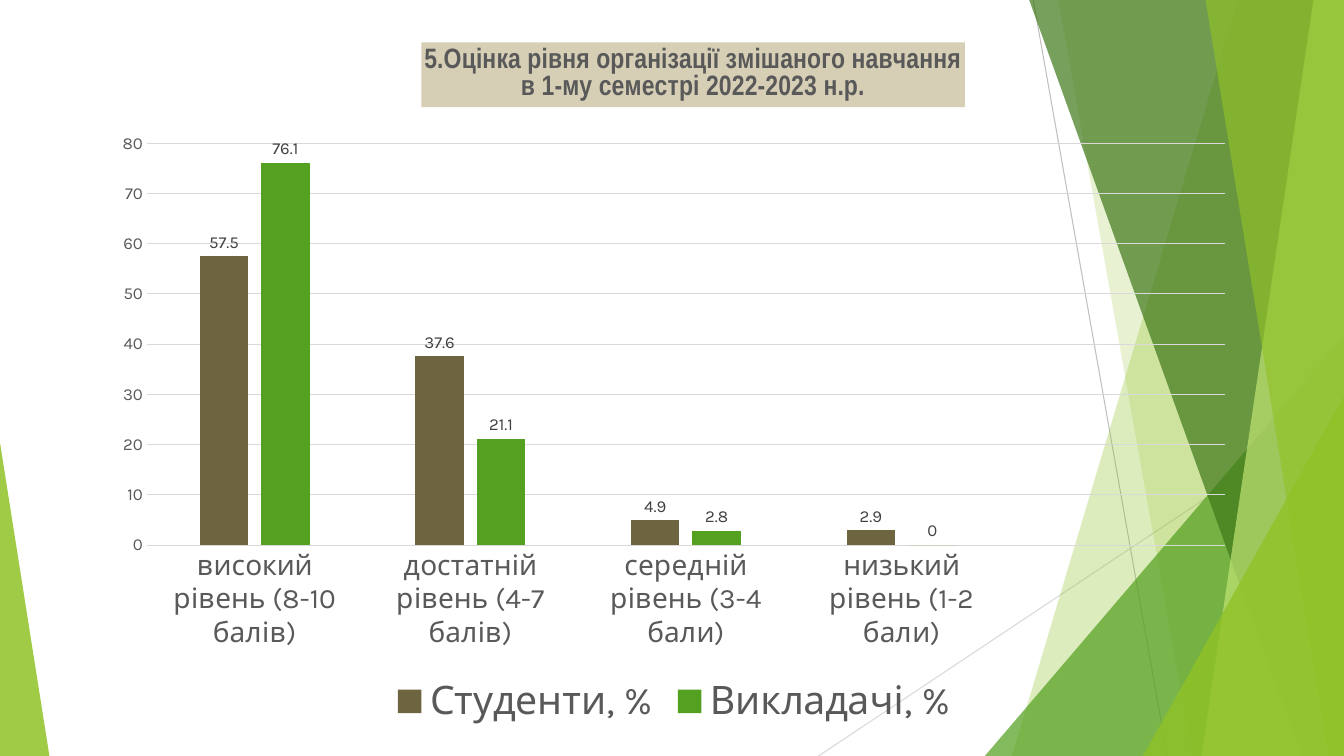
from dataclasses import dataclass

import pptx
import pptx.chart.chart
import pptx.chart.data
import pptx.dml.color
import pptx.dml.fill
import pptx.enum.chart
import pptx.enum.shapes
import pptx.enum.text
import pptx.oxml
import pptx.oxml.ns
import pptx.shapes.autoshape
import pptx.slide
import pptx.text.text
import pptx.util

SLIDE_WIDTH = pptx.util.Inches(13.333)
SLIDE_HEIGHT = pptx.util.Inches(7.5)
COLORS = {
    "lime": "90C226",
    "pale lime": "C0E474",
    "green": "54A021",
    "dark green": "3F7819",
    "olive": "6D6540",
    "sand": "D6CFB6",
    "text": "595959",
    "label": "404040",
    "black": "000000",
    "line": "BFBFBF",
    "light line": "D9D9D9",
}
CHART_FONT = "Karla"
TITLE_FONT = "Arial Narrow"
TITLE = "5.Оцінка рівня організації змішаного навчання\nв 1-му семестрі 2022-2023 н.р."
CATEGORIES = [
    "високий рівень (8-10 балів)",
    "достатній рівень (4-7 балів)",
    "середній рівень (3-4 бали)",
    "низький рівень (1-2 бали)",
    "",
]


# Positions and sizes are percentages of the slide's width and height.
@dataclass
class Ray:
    start: tuple[float, float]
    end: tuple[float, float]
    color: str


@dataclass
class Shard:
    """A band from the slanted edge top-bottom to the slide's right edge."""
    top: float
    bottom: float
    color: str
    opacity: int


@dataclass
class Corner:
    """A right triangle standing on the slide's bottom edge."""
    left: float
    top: float
    width: float
    apex: float
    color: str
    opacity: int


@dataclass
class Series:
    name: str
    values: list[float | None]
    color: str


RAYS = [
    Ray((76.88, 0), (86.85, 100), "line"),
    Ray((100, 53.73), (60.9, 100), "light line"),
]
FACETS = [
    Shard(92.1, 75.3, "lime", 30),
    Shard(78.75, 88.73, "lime", 20),
    Corner(73.28, 44.4, 26.72, 1, "green", 72),
    Shard(76.58, 96.83, "dark green", 70),
    Shard(97.73, 89.4, "pale lime", 70),
    Shard(89.7, 98.85, "lime", 65),
    Corner(85.05, 52.4, 14.95, 1, "lime", 80),
    Corner(0, 58.53, 3.68, 0, "lime", 85),
]
SERIES = [
    Series("Студенти, %", [57.5, 37.6, 4.9, 2.9, None], "olive"),
    Series("Викладачі, %", [76.1, 21.1, 2.8, 0, None], "green"),
]


def across(percent: float) -> int:
    return round(SLIDE_WIDTH * percent / 100)


def down(percent: float) -> int:
    return round(SLIDE_HEIGHT * percent / 100)


def rgb(name: str) -> pptx.dml.color.RGBColor:
    return pptx.dml.color.RGBColor.from_string(COLORS[name])


def set_fill(fill: pptx.dml.fill.FillFormat, color: str) -> None:
    fill.solid()
    fill.fore_color.rgb = rgb(color)


def set_font(font: pptx.text.text.Font, size: int, color: str, name: str = CHART_FONT) -> None:
    font.size = pptx.util.Pt(size)
    font.color.rgb = rgb(color)
    font.name = name


def draw_ray(slide: pptx.slide.Slide, ray: Ray) -> None:
    connector = slide.shapes.add_connector(
        pptx.enum.shapes.MSO_CONNECTOR.STRAIGHT,
        across(ray.start[0]), down(ray.start[1]), across(ray.end[0]), down(ray.end[1]))
    connector.line.color.rgb = rgb(ray.color)
    connector.line.width = pptx.util.Pt(0.75)
    connector._element.spPr.append(pptx.oxml.parse_xml(
        f"<a:effectLst {pptx.oxml.ns.nsdecls('a')}/>"))


def add_shard(slide: pptx.slide.Slide, shard: Shard) -> pptx.shapes.autoshape.Shape:
    builder = slide.shapes.build_freeform(across(shard.top), 0)
    builder.add_line_segments([
        (SLIDE_WIDTH, 0), (SLIDE_WIDTH, SLIDE_HEIGHT), (across(shard.bottom), SLIDE_HEIGHT)])
    return builder.convert_to_shape()


def add_corner(slide: pptx.slide.Slide, corner: Corner) -> pptx.shapes.autoshape.Shape:
    shape = slide.shapes.add_shape(
        pptx.enum.shapes.MSO_SHAPE.ISOSCELES_TRIANGLE,
        across(corner.left), down(corner.top), across(corner.width), down(100 - corner.top))
    shape.adjustments[0] = corner.apex
    return shape


def draw_facet(slide: pptx.slide.Slide, facet: Shard | Corner) -> None:
    shape = add_shard(slide, facet) if isinstance(facet, Shard) else add_corner(slide, facet)
    shape.shadow.inherit = False
    shape.line.fill.background()
    set_fill(shape.fill, facet.color)
    color = shape._element.spPr.find(".//" + pptx.oxml.ns.qn("a:srgbClr"))
    color.append(pptx.oxml.parse_xml(
        f'<a:alpha {pptx.oxml.ns.nsdecls("a")} val="{facet.opacity * 1000}"/>'))


def place_in_chart(chart: pptx.chart.chart.Chart, tag: str, **shares: float) -> None:
    """Fix the position of a chart part, in shares of the chart's size."""
    part = chart._chartSpace.find(".//" + pptx.oxml.ns.qn(tag))
    target = '<c:layoutTarget val="inner"/>' if tag == "c:plotArea" else ""
    modes = '<c:xMode val="edge"/><c:yMode val="edge"/>'
    sizes = "".join(f'<c:{key} val="{share}"/>' for key, share in shares.items())
    layout = pptx.oxml.parse_xml(
        f"<c:layout {pptx.oxml.ns.nsdecls('c')}><c:manualLayout>{target}{modes}{sizes}"
        "</c:manualLayout></c:layout>")
    previous = part.find(pptx.oxml.ns.qn("c:layout"))
    if previous is None:
        part.insert(0, layout)
    else:
        part.replace(previous, layout)


def format_title(chart: pptx.chart.chart.Chart) -> None:
    chart.has_title = True
    title = chart.chart_title
    title.text_frame.text = TITLE
    title.include_in_layout = False
    set_fill(title.format.fill, "sand")
    for paragraph in title.text_frame.paragraphs:
        paragraph.alignment = pptx.enum.text.PP_ALIGN.CENTER
        for run in paragraph.runs:
            set_font(run.font, 20, "text", TITLE_FONT)
            run.font.bold = True


def format_axes(chart: pptx.chart.chart.Chart) -> None:
    for axis, size in ((chart.category_axis, 20), (chart.value_axis, 12)):
        axis.major_tick_mark = pptx.enum.chart.XL_TICK_MARK.NONE
        axis.minor_tick_mark = pptx.enum.chart.XL_TICK_MARK.NONE
        set_font(axis.tick_labels.font, size, "text")
    chart.value_axis.format.line.fill.background()
    chart.value_axis.minimum_scale, chart.value_axis.maximum_scale = 0, 80
    chart.value_axis.major_unit = 10
    for line in (chart.category_axis.format.line, chart.value_axis.major_gridlines.format.line):
        line.color.rgb = rgb("light line")
        line.width = pptx.util.Pt(0.75)


def format_columns(chart: pptx.chart.chart.Chart) -> None:
    plot = chart.plots[0]
    plot.gap_width, plot.overlap = 219, -27
    plot.vary_by_categories = False
    for columns, series in zip(plot.series, SERIES):
        set_fill(columns.format.fill, series.color)
        columns.invert_if_negative = False
        labels = columns.data_labels
        labels.show_value = True
        labels.position = pptx.enum.chart.XL_LABEL_POSITION.OUTSIDE_END
        set_font(labels.font, 12, "label")


def draw_chart(slide: pptx.slide.Slide) -> None:
    data = pptx.chart.data.CategoryChartData()
    data.categories = CATEGORIES
    for series in SERIES:
        data.add_series(series.name, series.values)
    chart = slide.shapes.add_chart(
        pptx.enum.chart.XL_CHART_TYPE.COLUMN_CLUSTERED,
        across(7.43), down(4.67), across(85.43), down(92.13), data).chart
    set_font(chart.font, 10, "black")
    format_title(chart)
    format_axes(chart)
    format_columns(chart)
    chart.has_legend = True
    chart.legend.position = pptx.enum.chart.XL_LEGEND_POSITION.BOTTOM
    chart.legend.include_in_layout = False
    set_font(chart.legend.font, 28, "text")
    place_in_chart(chart, "c:title", x=0.28, y=0.01)
    place_in_chart(chart, "c:plotArea", x=0.041, y=0.155, w=0.939, h=0.577)


def main() -> None:
    presentation = pptx.Presentation()
    presentation.slide_width, presentation.slide_height = SLIDE_WIDTH, SLIDE_HEIGHT
    slide = presentation.slides.add_slide(presentation.slide_layouts[6])
    for ray in RAYS:
        draw_ray(slide, ray)
    for facet in FACETS:
        draw_facet(slide, facet)
    draw_chart(slide)
    presentation.save("out.pptx")


if __name__ == "__main__":
    main()
